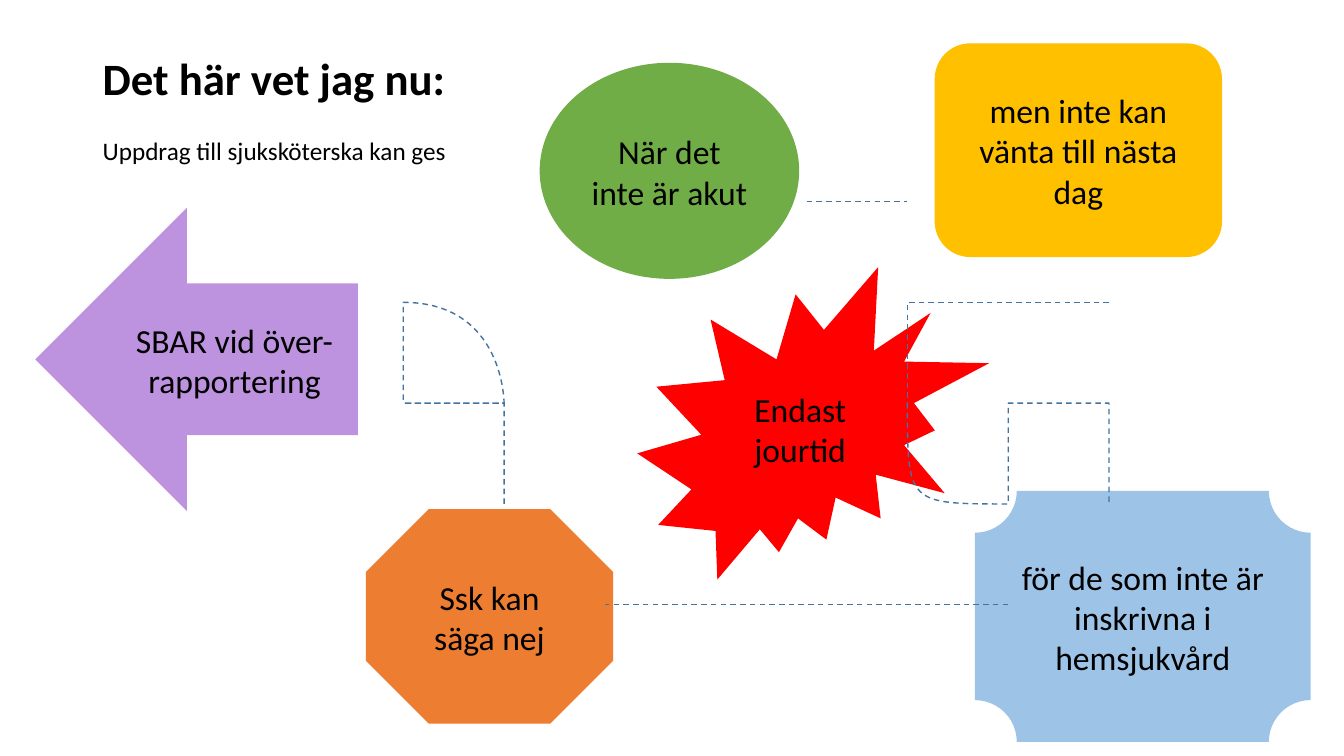
import pptx
import pptx.util
import pptx.dml.color
import pptx.enum.dml
import pptx.enum.shapes
import pptx.enum.text
import pptx.oxml.ns
import lxml.etree

Inches = pptx.util.Inches
Kind = pptx.enum.shapes.MSO_SHAPE


def colour(value):
    return pptx.dml.color.RGBColor.from_string(value)


class Slide:
    """Holds the style and the current page, and draws each kind of element."""

    font = "Calibri"
    ink = "000000"
    thread = "43739E"

    def __init__(self, page):
        self.page = page

    def fill_text(self, frame, text, size, bold=False, align=None):
        frame.word_wrap = True
        frame.vertical_anchor = pptx.enum.text.MSO_ANCHOR.TOP
        para = frame.paragraphs[0]
        para.text = text
        para.alignment = align
        for span in para.runs:
            span.font.name = self.font
            span.font.size = pptx.util.Pt(size)
            span.font.bold = bold
            span.font.color.rgb = colour(self.ink)
        return para

    def label(self, place, text, size, bold=False):
        box = self.page.shapes.add_textbox(*map(Inches, place))
        return self.fill_text(box.text_frame, text, size, bold)

    def bubble(self, kind, place, fill, text, top=0.36, outline=None):
        shape = self.page.shapes.add_shape(kind, *map(Inches, place))
        shape.shadow.inherit = False
        shape.fill.solid()
        shape.fill.fore_color.rgb = colour(fill)
        if outline:
            shape.line.color.rgb = colour(outline)
            shape.line.width = pptx.util.Pt(1)
        else:
            shape.line.fill.background()
        shape.text_frame.margin_top = Inches(top)
        self.fill_text(shape.text_frame, text, 24, align=pptx.enum.text.PP_ALIGN.CENTER)

    def curve(self, points):
        start, *rest = points
        builder = self.page.shapes.build_freeform(*start, scale=Inches(1))
        builder.add_line_segments(rest, close=False)
        shape = builder.convert_to_shape()
        shape.shadow.inherit = False
        shape.fill.background()
        shape.line.color.rgb = colour(self.thread)
        shape.line.width = pptx.util.Pt(1)
        shape.line.dash_style = pptx.enum.dml.MSO_LINE.DASH
        name = pptx.oxml.ns.qn
        outline = next(shape.element.iter(name("a:path")))
        steps = outline.findall(name("a:lnTo"))
        for first in range(0, len(steps), 3):
            bend = lxml.etree.SubElement(outline, name("a:cubicBezTo"))
            for step in steps[first:first + 3]:
                bend.append(step[0])
                outline.remove(step)


BUBBLES = [
    (Kind.OVAL, (5.36, 0.63, 2.56, 2.13), "70AD47", "När det inte är akut", 0.36, "70AD47"),
    (Kind.EXPLOSION2, (6.32, 2.65, 3.49, 3.1), "FF0000", "Endast jourtid", 0.29),
    (Kind.LEFT_ARROW, (0.35, 2.06, 3.2, 3.01), "BD92DE", "SBAR vid över-rapportering"),
    (Kind.PLAQUE, (9.67, 4.87, 3.33, 2.49), "9DC3E6",
     "för de som inte är inskrivna i hemsjukvård"),
    (Kind.ROUNDED_RECTANGLE, (9.27, 0.43, 2.85, 2.12), "FFC000",
     "men inte kan vänta till nästa dag"),
    (Kind.OCTAGON, (3.63, 5.05, 2.45, 2.13), "ED7D31", "Ssk kan säga nej"),
]

CURVES = [
    [(7.97, 1.7), (8.04, 1.61), (8.11, 1.51), (8.19, 1.53),
     (8.27, 1.55), (8.36, 1.79), (8.44, 1.8), (8.53, 1.81), (8.58, 1.62), (8.71, 1.58),
     (8.84, 1.54), (9.14, 1.56), (9.22, 1.56), (9.29, 1.55), (9.23, 1.55), (9.16, 1.56)],
    [(10.8, 2.57), (10.86, 2.77), (10.92, 2.96), (10.82, 3.03),
     (10.73, 3.09), (10.38, 2.89), (10.23, 2.94), (10.08, 2.98), (10.09, 3.24), (9.94, 3.3),
     (9.79, 3.36), (9.46, 3.24), (9.33, 3.29), (9.19, 3.34), (9.13, 3.58), (9.13, 3.58)],
    [(9.04, 4.42), (9.26, 4.53), (9.49, 4.64), (9.67, 4.63),
     (9.85, 4.62), (9.99, 4.38), (10.14, 4.35), (10.28, 4.32), (10.39, 4.48), (10.54, 4.46),
     (10.7, 4.43), (10.95, 4.2), (11.09, 4.2), (11.23, 4.21), (11.37, 4.37), (11.41, 4.48),
     (11.44, 4.59), (11.29, 4.86), (11.29, 4.86)],
    [(9.62, 6.11), (9.51, 6.01), (9.41, 5.9), (9.28, 5.92),
     (9.15, 5.95), (9.06, 6.22), (8.85, 6.27), (8.64, 6.31), (8.21, 6.17), (8.01, 6.19),
     (7.81, 6.21), (7.86, 6.45), (7.65, 6.41), (7.43, 6.36), (6.94, 6), (6.75, 5.95),
     (6.55, 5.9), (6.58, 6.09), (6.47, 6.13), (6.36, 6.16), (6.22, 6.17), (6.09, 6.18)],
    [(4.81, 4.98), (4.9, 4.89), (4.99, 4.8), (4.99, 4.67),
     (4.99, 4.55), (4.92, 4.32), (4.84, 4.23), (4.75, 4.14), (4.53, 4.24), (4.48, 4.15),
     (4.44, 4.07), (4.58, 3.84), (4.57, 3.72), (4.57, 3.6), (4.53, 3.46), (4.46, 3.43),
     (4.38, 3.4), (4.23, 3.51), (4.13, 3.55), (4.03, 3.59), (3.96, 3.67), (3.86, 3.67),
     (3.77, 3.68), (3.66, 3.63), (3.56, 3.58)],
]


def main():
    deck = pptx.Presentation()
    deck.slide_width, deck.slide_height = Inches(13.33), Inches(7.5)
    slide = Slide(deck.slides.add_slide(deck.slide_layouts[6]))
    title = slide.label((0.92, 0.51, 11.82, 0.71), "Det här vet jag nu:", 32, bold=True)
    title.line_spacing = 0.9
    slide.label((0.92, 1.29, 3.84, 0.4), "Uppdrag till sjuksköterska kan ges", 18)
    for bubble in BUBBLES:
        slide.bubble(*bubble)
    for points in CURVES:
        slide.curve(points)
    deck.save("out.pptx")


if __name__ == "__main__":
    main()
